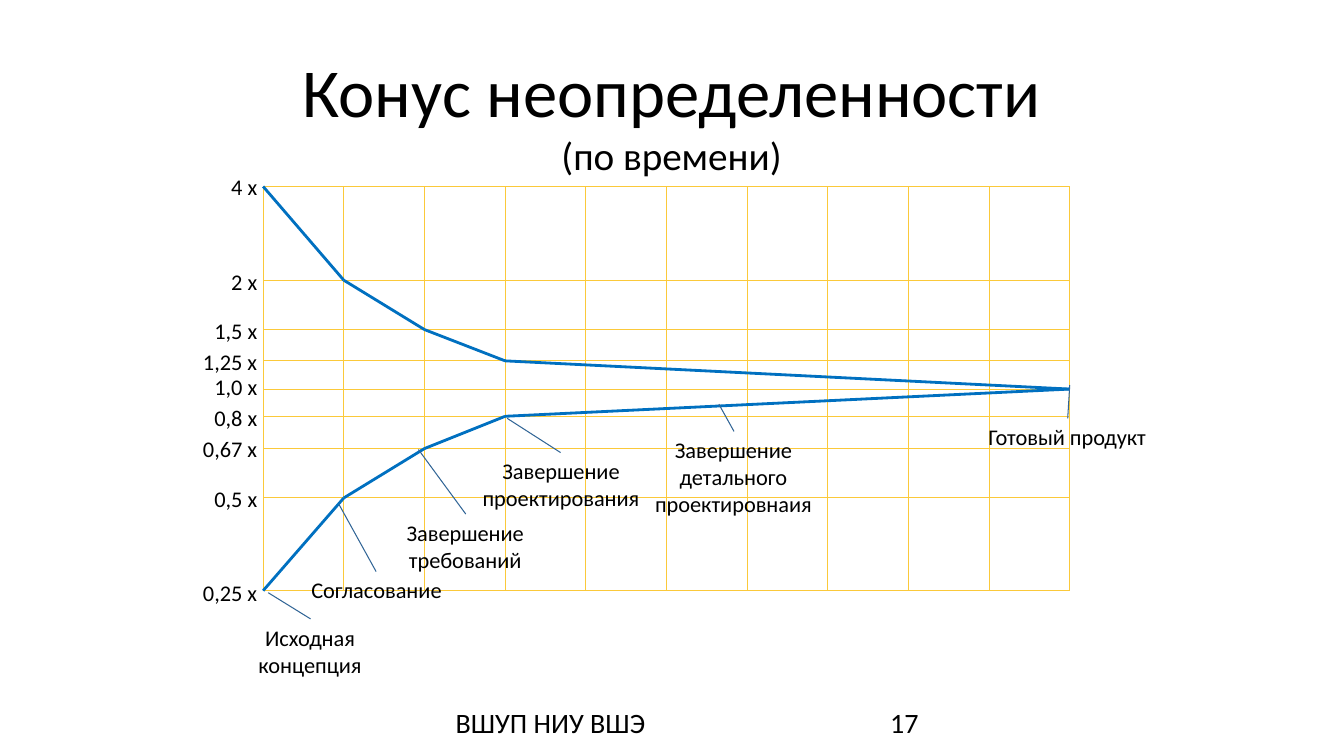
from dataclasses import dataclass
from itertools import pairwise

from lxml.etree import SubElement
from pptx import Presentation
from pptx.dml.color import RGBColor
from pptx.enum.shapes import MSO_CONNECTOR as Connector
from pptx.enum.text import MSO_ANCHOR as Anchor, PP_ALIGN as Align
from pptx.oxml.ns import qn
from pptx.util import Inches, Pt


@dataclass(frozen=True)
class Theme:
    font: str = "Calibri"
    text: RGBColor = RGBColor(0, 0, 0)
    grid: RGBColor = RGBColor(0xFB, 0xC9, 0x3A)
    curve: RGBColor = RGBColor(0x00, 0x70, 0xC0)
    pointer: RGBColor = RGBColor(0x31, 0x65, 0x96)
    title_size: float = 49
    subtitle_size: float = 28
    footer_size: float = 20
    label_size: float = 16
    thin: float = 0.75
    thick: float = 2


THEME = Theme()
LEFT, RIGHT, TOP, BOTTOM = 2.61, 10.61, 1.85, 5.86
COLUMNS = 10
COLUMN_WIDTH = (RIGHT - LEFT) / COLUMNS
LABEL_WIDTH, LABEL_HEIGHT, LABEL_RIGHT = 0.75, 0.37, 2.65

# Label, height of its grid line, top of the label
LEVELS = [
    ("4 х", TOP, 1.67),
    ("2 х", 2.78, 2.61),
    ("1,5 х", 3.27, 3.1),
    ("1,25 х", 3.58, 3.4),
    ("1,0 х", 3.86, 3.65),
    ("0,8 х", 4.13, 3.96),
    ("0,67 х", 4.45, 4.27),
    ("0,5 х", 4.94, 4.76),
    ("0,25 х", BOTTOM, 5.7),
]
MILESTONE_COLUMNS = [0, 1, 2, 3, COLUMNS]

# Milestone, box (left, top, width, height), pointer start, pointer end
MILESTONES = [
    ("Исходная концепция", (2.19, 6.14, 1.77, 0.64), (3.08, 6.14), (2.66, 5.88)),
    ("Согласование", (2.72, 5.67, 2.03, 0.37), (3.73, 5.67), (3.36, 5)),
    ("Завершение требований", (3.73, 5.1, 1.77, 0.64), (4.62, 5.1), (4.15, 4.46)),
    ("Завершение проектирования", (4.68, 4.49, 1.77, 0.64), (5.56, 4.49), (5.03, 4.15)),
    ("Завершение детального проектировнаия", (6.39, 4.28, 1.77, 0.91),
     (7.28, 4.28), (7.13, 4.01)),
    ("Готовый продукт", (9.7, 4.15, 1.77, 0.64), (10.59, 4.15), (10.61, 3.82)),
]


def add_line(slide, start, end, color, width):
    line = slide.shapes.add_connector(
        Connector.STRAIGHT, *(Inches(length) for length in (*start, *end)))
    line.line.color.rgb = color
    line.line.width = Pt(width)
    SubElement(line._element.spPr, qn("a:effectLst"))


def add_text(slide, text, box, sizes, align=Align.LEFT, anchor=Anchor.TOP, wrap=True):
    """Add a text box; sizes holds one type size for each line of the text."""
    frame = slide.shapes.add_textbox(*(Inches(length) for length in box)).text_frame
    frame.word_wrap = wrap
    frame.vertical_anchor = anchor
    paragraph = frame.paragraphs[0]
    paragraph.text = text
    paragraph.alignment = align
    for run, size in zip(paragraph.runs, sizes):
        run.font.name = THEME.font
        run.font.size = Pt(size)
        run.font.color.rgb = THEME.text


def add_grid(slide):
    for _, y, _ in LEVELS:
        add_line(slide, (LEFT, y), (RIGHT, y), THEME.grid, THEME.thin)
    for column in range(COLUMNS + 1):
        x = LEFT + column * COLUMN_WIDTH
        add_line(slide, (x, TOP), (x, BOTTOM), THEME.grid, THEME.thin)


def add_cone(slide):
    """Draw both curves, from the outer levels in to the middle one."""
    heights = [y for _, y, _ in LEVELS]
    for curve in (heights, heights[::-1]):
        points = [(LEFT + column * COLUMN_WIDTH, y)
                  for column, y in zip(MILESTONE_COLUMNS, curve)]
        for start, end in pairwise(points):
            add_line(slide, start, end, THEME.curve, THEME.thick)


def add_level_labels(slide):
    for label, _, top in LEVELS:
        box = (LABEL_RIGHT - LABEL_WIDTH, top, LABEL_WIDTH, LABEL_HEIGHT)
        add_text(slide, label, box, [THEME.label_size], Align.RIGHT, wrap=False)


def add_milestones(slide):
    for milestone, box, start, end in MILESTONES:
        add_text(slide, milestone, box, [THEME.label_size], Align.CENTER)
        add_line(slide, start, end, THEME.pointer, THEME.thin)


def main():
    deck = Presentation()
    deck.slide_width, deck.slide_height = Inches(13.33), Inches(7.5)
    slide = deck.slides.add_slide(deck.slide_layouts[6])

    add_text(slide, "Конус неопределенности\v(по времени)", (2.35, 0.4, 8.62, 1.45),
             [THEME.title_size, THEME.subtitle_size], Align.CENTER, Anchor.MIDDLE)
    add_grid(slide)
    add_cone(slide)
    add_level_labels(slide)
    add_milestones(slide)
    add_text(slide, "ВШУП НИУ ВШЭ", (4.42, 6.95, 4.5, 0.4), [THEME.footer_size])
    add_text(slide, "17", (8.73, 6.95, 2.25, 0.4), [THEME.footer_size])

    deck.save("out.pptx")


if __name__ == "__main__":
    main()
